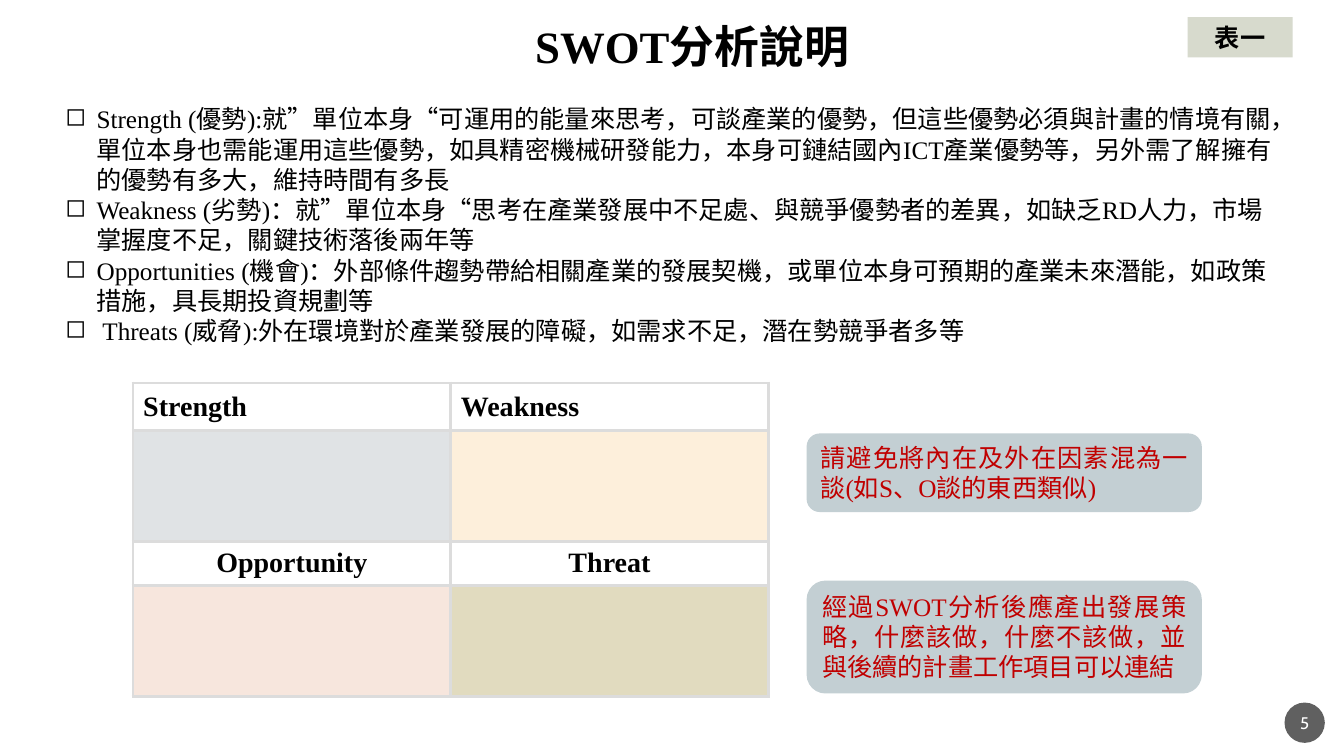
import pptx
import pptx.dml.color
import pptx.enum.shapes
import pptx.enum.text
import pptx.oxml
import pptx.oxml.ns
import pptx.util

PX = 9144  # EMU per px, 100 px to the inch
SERIF, SANS = "Times New Roman", "Cabin"
COLORS = {
    "ink": "000000", "white": "FFFFFF", "warning": "C00000",
    "tag": "D7DACD", "note": "C3CFD3", "page": "1D1D1D", "border": "DCDCDC",
    "strength": "D9DDDF", "weakness": "FDECD2",
    "opportunity": "F5E0D5", "threat": "DAD2B0",
}
ALIGN = pptx.enum.text.PP_ALIGN
ANCHOR = pptx.enum.text.MSO_ANCHOR
SHAPE = pptx.enum.shapes.MSO_SHAPE
FIT = pptx.enum.text.MSO_AUTO_SIZE.SHAPE_TO_FIT_TEXT

DEFINITIONS = [
    "Strength (優勢):就”單位本身“可運用的能量來思考，可談產業的優勢，但這些優勢必須與計畫的情境有關，"
    "單位本身也需能運用這些優勢，如具精密機械研發能力，本身可鏈結國內ICT產業優勢等，"
    "另外需了解擁有的優勢有多大，維持時間有多長",
    "Weakness (劣勢)：就”單位本身“思考在產業發展中不足處、與競爭優勢者的差異，"
    "如缺乏RD人力，市場掌握度不足，關鍵技術落後兩年等",
    "Opportunities (機會)：外部條件趨勢帶給相關產業的發展契機，"
    "或單位本身可預期的產業未來潛能，如政策措施，具長期投資規劃等",
    " Threats (威脅):外在環境對於產業發展的障礙，如需求不足，潛在勢競爭者多等",
]
NOTES = [
    ((800, 430, 392, 78), "請避免將內在及外在因素混為一談(如S、O談的東西類似)"),
    ((800, 576, 392, 112), "經過SWOT分析後應產出發展策略，什麼該做，什麼不該做，並與後續的計畫工作項目可以連結"),
]
QUADRANT_ROWS = [
    (ALIGN.LEFT, ["Strength", "Weakness"], ["strength", "weakness"]),
    (ALIGN.CENTER, ["Opportunity", "Threat"], ["opportunity", "threat"]),
]
ROW_HEIGHTS = [47, 110, 44, 110]


def px(*lengths):
    return [length * PX for length in lengths]


def rgb(name):
    return pptx.dml.color.RGBColor.from_string(COLORS[name])


def set_all(target, values):
    for name, value in values.items():
        setattr(target, name, value)


def paint(fill, color, opacity=100):
    fill.solid()
    fill.fore_color.rgb = rgb(color)
    if opacity < 100:
        srgb = fill._xPr.find(".//" + pptx.oxml.ns.qn("a:srgbClr"))
        srgb.append(pptx.oxml.parse_xml(
            f'<a:alpha {pptx.oxml.ns.nsdecls("a")} val="{opacity * 1000}"/>'))


def write(paragraph, text, size, color="ink", align=ALIGN.LEFT, font=SERIF, bold=False):
    paragraph.alignment = align
    run = paragraph.add_run()
    run.text = text
    set_all(run.font, {"name": font, "size": pptx.util.Pt(size), "bold": bold})
    run.font.color.rgb = rgb(color)


def add_text_box(slide, box):
    frame = slide.shapes.add_textbox(*px(*box)).text_frame
    set_all(frame, {"word_wrap": True, "auto_size": FIT})
    return frame


def add_filled_shape(slide, kind, box, color, opacity=100):
    shape = slide.shapes.add_shape(kind, *px(*box))
    shape.shadow.inherit = False
    shape.line.fill.background()
    paint(shape.fill, color, opacity)
    set_all(shape.text_frame, {"word_wrap": True, "vertical_anchor": ANCHOR.TOP})
    return shape.text_frame


def add_definitions(slide):
    frame = add_text_box(slide, (55, 98, 1227, 252))
    for index, definition in enumerate(DEFINITIONS):
        paragraph = frame.add_paragraph() if index else frame.paragraphs[0]
        write(paragraph, definition, 18)
        properties = paragraph._p.get_or_add_pPr()
        indent, = px(31)
        properties.set("marL", str(indent))
        properties.set("indent", str(-indent))
        properties.append(pptx.oxml.parse_xml(
            f'<a:buChar {pptx.oxml.ns.nsdecls("a")} char="◻"/>'))


def add_borders(cell):
    properties = cell._tc.get_or_add_tcPr()
    for index, side in enumerate(("lnL", "lnR", "lnT", "lnB")):
        properties.insert(index, pptx.oxml.parse_xml(
            f'<a:{side} {pptx.oxml.ns.nsdecls("a")} w="{pptx.util.Pt(2.25)}">'
            f'<a:solidFill><a:srgbClr val="{COLORS["border"]}"/></a:solidFill></a:{side}>'))


def add_swot_table(slide):
    table = slide.shapes.add_table(4, 2, *px(132, 380, 630, sum(ROW_HEIGHTS))).table
    set_all(table, {"first_row": False, "horz_banding": False})
    for row, height in zip(table.rows, px(*ROW_HEIGHTS)):
        row.height = height
    for pair, (align, headings, colors) in enumerate(QUADRANT_ROWS):
        for column, (heading, color) in enumerate(zip(headings, colors)):
            heading_cell = table.cell(2 * pair, column)
            area_cell = table.cell(2 * pair + 1, column)
            heading_cell.vertical_anchor = ANCHOR.MIDDLE
            heading_cell.fill.background()
            paragraph = heading_cell.text_frame.paragraphs[0]
            write(paragraph, heading, 20, align=align, bold=True)
            paragraph.space_before = pptx.util.Pt(4)
            paint(area_cell.fill, color, 80)
            add_borders(heading_cell)
            add_borders(area_cell)


def add_page_number(slide):
    frame = add_filled_shape(slide, SHAPE.OVAL, (1274, 697, 40, 40), "page", 70)
    inset, = px(2)
    set_all(frame, {"vertical_anchor": ANCHOR.MIDDLE,
                    "margin_left": inset, "margin_right": inset})
    write(frame.paragraphs[0], "5", 12, "white", ALIGN.CENTER, SANS)


def main():
    deck = pptx.Presentation()
    deck.slide_width, deck.slide_height = px(1333, 750)
    slide = deck.slides.add_slide(deck.slide_layouts[6])

    title = add_text_box(slide, (288, 14, 797, 64))
    write(title.paragraphs[0], "SWOT分析說明", 32, align=ALIGN.CENTER, bold=True)
    add_swot_table(slide)
    add_definitions(slide)
    tag = add_filled_shape(slide, SHAPE.RECTANGLE, (1178, 17, 104, 40), "tag")
    write(tag.paragraphs[0], "表一", 18, align=ALIGN.CENTER, font=SANS, bold=True)
    add_page_number(slide)
    for box, advice in NOTES:
        note = add_filled_shape(slide, SHAPE.ROUNDED_RECTANGLE, box, "note")
        write(note.paragraphs[0], advice, 18, "warning", ALIGN.JUSTIFY)

    deck.save("out.pptx")


if __name__ == "__main__":
    main()
